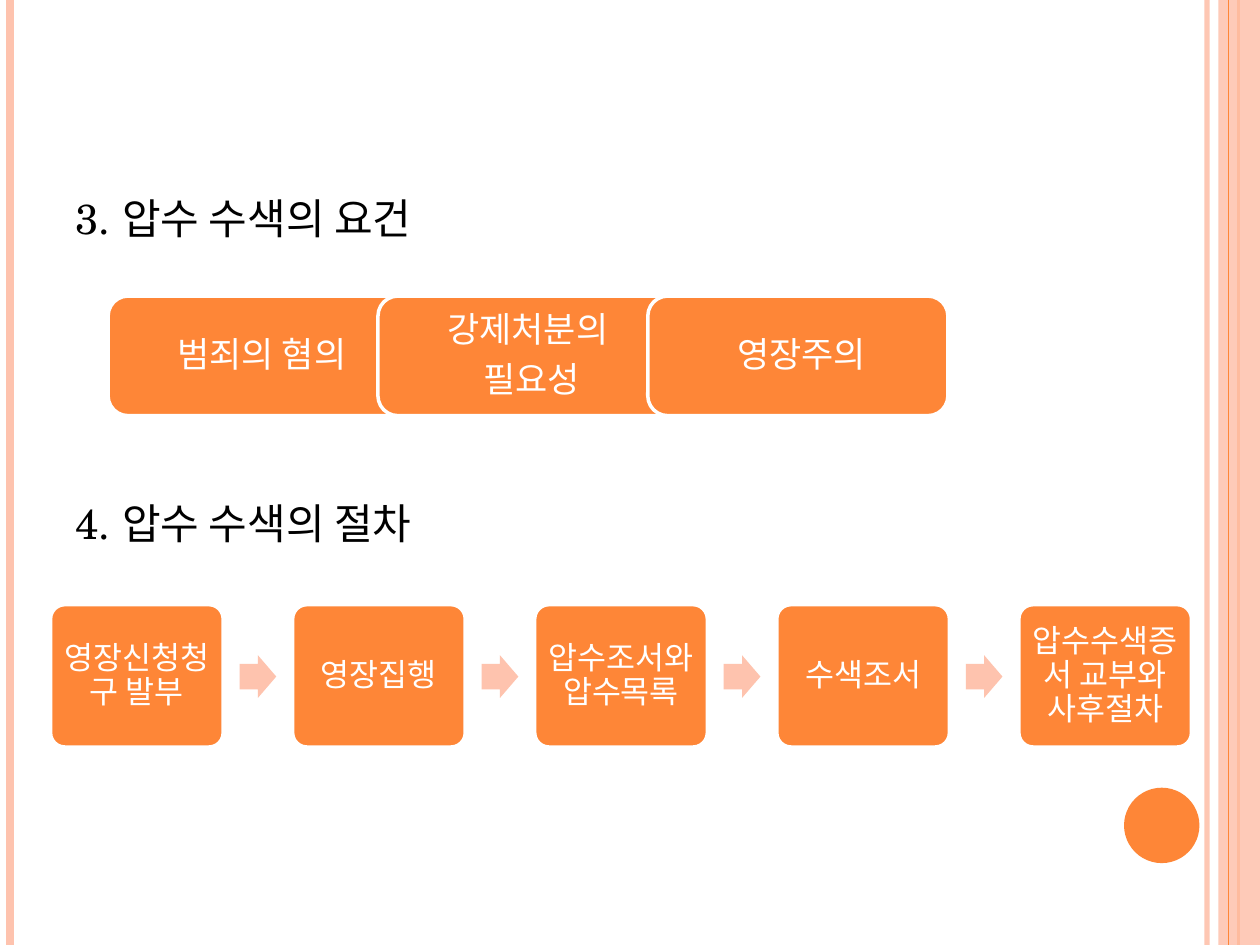
from lxml import etree
from pptx import Presentation
from pptx import util as u
from pptx.dml.color import RGBColor
from pptx.enum import shapes, text
from pptx.oxml.ns import qn

FONT = "TeX Gyre Schola"
ORANGE, PEACH, WHITE, BLACK = "FE8637", "FEC3AE", "FFFFFF", "000000"


def paint(target, color, alpha=100):
    """Give a fill, line fill or font fill a solid colour."""
    target.solid()
    target.fore_color.rgb = RGBColor.from_string(color)
    if alpha < 100:
        hue = target._xPr.find(qn("a:solidFill"))[0]
        etree.SubElement(hue, qn("a:alpha"), val=str(alpha * 1000))


def add_block(kind, left, top, width, height, fill, words="", size=18,
              inset=0.18, left_inset=0.18, outline=None, alpha=100):
    """Add a flat shape with optional centred white text."""
    block = page.shapes.add_shape(kind, u.Cm(left), u.Cm(top), u.Cm(width), u.Cm(height))
    block.shadow.inherit = False
    paint(block.fill, fill, alpha)
    if outline:
        paint(block.line.fill, outline)
        block.line.width = u.Pt(2)
    else:
        block.line.fill.background()
    if words:
        frame = block.text_frame
        frame.word_wrap = True
        frame.vertical_anchor = text.MSO_ANCHOR.MIDDLE
        frame.margin_left = u.Cm(left_inset)
        frame.margin_top = frame.margin_right = frame.margin_bottom = u.Cm(inset)
        frame.text = words
        for para in frame.paragraphs:
            para.alignment = text.PP_ALIGN.CENTER
            para.line_spacing = 0.9
            para.space_after = u.Pt(size * 0.35)
            para.font.name = FONT
            para.font.size = u.Pt(size)
            paint(para.font.fill, WHITE)
    return block


deck = Presentation()
deck.slide_width, deck.slide_height = u.Cm(25.4), u.Cm(19.05)
page = deck.slides.add_slide(deck.slide_layouts[6])
kinds = shapes.MSO_SHAPE

# Vertical stripes, the band at the right edge and the disc
stripes = [(24.33, PEACH, 3, 93), (0.2, PEACH, 4.5, 100), (24.97, ORANGE, 1.5, 100),
           None, (24.77, ORANGE, 0.75, 100)]
for stripe in stripes:
    if stripe is None:
        add_block(kinds.RECTANGLE, 24.56, 0, 0.84, 19.05, PEACH, alpha=87)
        continue
    x, color, weight, alpha = stripe
    line = page.shapes.add_connector(shapes.MSO_CONNECTOR.STRAIGHT,
                                     u.Cm(x), 0, u.Cm(x), deck.slide_height)
    paint(line.line.fill, color, alpha)
    line.line.width = u.Pt(weight)
    etree.SubElement(line._element.spPr, qn("a:effectLst"))
add_block(kinds.OVAL, 22.66, 15.88, 1.52, 1.52, ORANGE)

# Section headings
for top, heading in [(3.76, "3. 압수 수색의 요건"), (9.9, "4. 압수 수색의 절차")]:
    box = page.shapes.add_textbox(u.Cm(1.27), u.Cm(top), u.Cm(20.75), u.Cm(1.3))
    box.text_frame.word_wrap = True
    para = box.text_frame.paragraphs[0]
    para.text = heading
    para.font.name = FONT
    para.font.size = u.Pt(24)
    paint(para.font.fill, BLACK)

# Overlapping requirements
requirements = ["범죄의 혐의", "강제처분의 \n필요성", "영장주의"]
for index, words in enumerate(requirements):
    add_block(kinds.FLOWCHART_ALTERNATE_PROCESS, 2.18 + 5.44 * index, 5.97, 6.05, 2.41,
              ORANGE, words, size=20, inset=0.08, left_inset=0.23, outline=WHITE)

# Procedure steps with arrows between them
steps = ["영장신청청구 발부", "영장집행", "압수조서와 압수목록", "수색조서",
         "압수수색증서 교부와 사후절차"]
for index, words in enumerate(steps):
    left = 1.02 + 4.88 * index
    step = add_block(kinds.ROUNDED_RECTANGLE, left, 12.19, 3.48, 2.87, ORANGE, words,
                     outline=WHITE)
    step.adjustments[0] = 0.1
    if index < len(steps) - 1:
        arrow = add_block(kinds.RIGHT_ARROW, left + 3.81, 13.21, 0.74, 0.86, PEACH)
        arrow.adjustments[0] = 0.6
        arrow.adjustments[1] = 0.5

deck.save("out.pptx")
